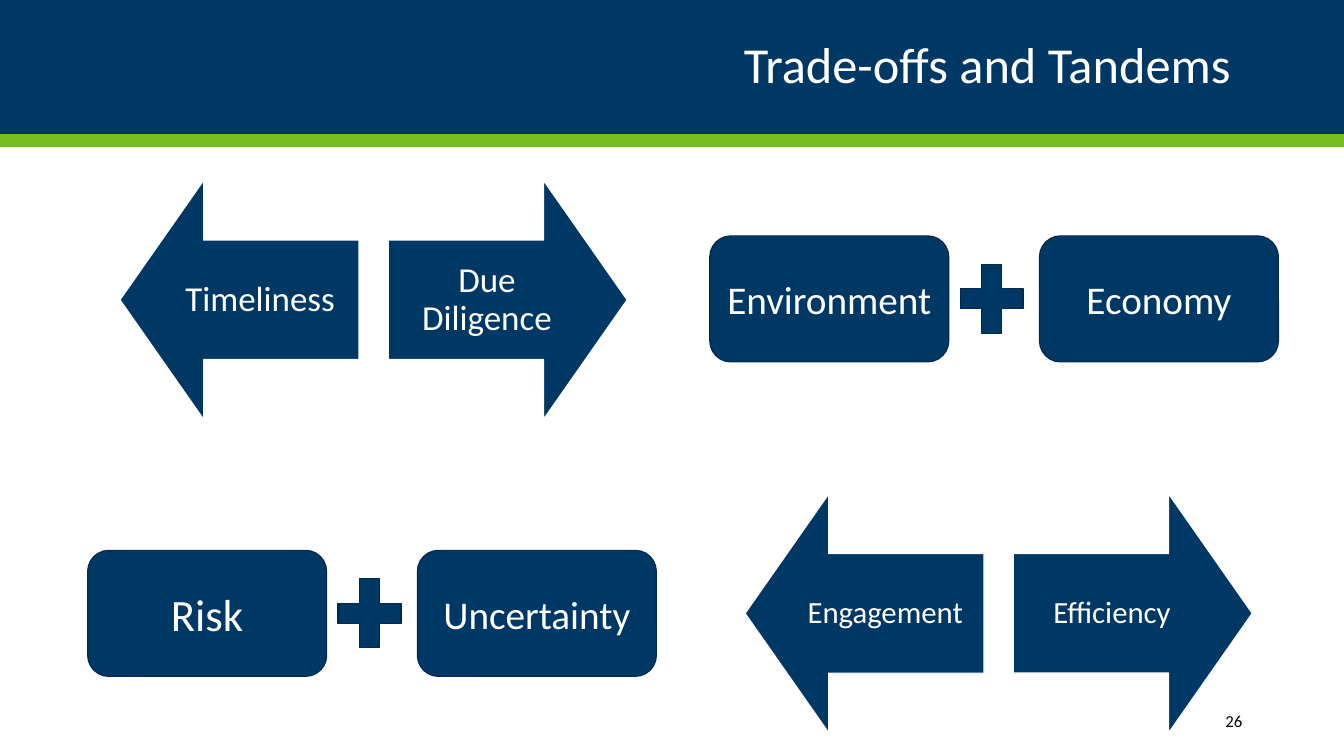
from pptx import Presentation
from pptx.dml.color import RGBColor
from pptx.enum.shapes import MSO_SHAPE
from pptx.enum.text import MSO_ANCHOR, PP_ALIGN
from pptx.util import Inches, Pt

NAVY = RGBColor(0x00, 0x38, 0x65)
DARK_NAVY = RGBColor(0x00, 0x29, 0x4B)
GREEN = RGBColor(0x78, 0xBE, 0x21)
WHITE = RGBColor(0xFF, 0xFF, 0xFF)
BLACK = RGBColor(0x00, 0x00, 0x00)
FONT = "Calibri"

TITLE = "Trade-offs and Tandems "
PAGE_NUMBER = "26"
BANDS = [(0, 1.33, NAVY), (1.33, 0.13, GREEN)]  # top, height, colour
# left, top, text size, text inset, words on the left and right arrow
TRADE_OFFS = [
    (1.19, 1.79, 25, 0.19, ("Timeliness", "Due Diligence")),
    (7.39, 4.9, 22, 0.17, ("Engagement", "Efficiency")),
]
# left, top, (word, text size) of each box
TANDEMS = [
    (0.87, 5.46, (("Risk", 32), ("Uncertainty", 28))),
    (7.04, 2.34, (("Environment", 28), ("Economy", 28))),
]

SLIDE_W, SLIDE_H = 13.33, 7.5
ARROW, ARROW_STEP = 2.37, 2.66
LABEL_W, LABEL_H = 1.96, 1.18
BOX_W, BOX_H, BOX_STEP = 2.37, 1.25, 3.27
PLUS_W, PLUS_H = 0.85, 0.93


def add_filled(kind, left, top, width, height, fill, line=None):
    shape = s.shapes.add_shape(
        kind, Inches(left), Inches(top), Inches(width), Inches(height))
    shape.shadow.inherit = False
    shape.fill.solid()
    shape.fill.fore_color.rgb = fill
    if line is None:
        shape.line.fill.background()
    else:
        shape.line.color.rgb = line
        shape.line.width = Pt(0.85)
    return shape


def write(shape, text, size, color=WHITE, align=PP_ALIGN.CENTER, spacing=1.0, inset=None):
    tf = shape.text_frame
    tf.word_wrap = True
    tf.vertical_anchor = MSO_ANCHOR.MIDDLE
    if inset is not None:
        for side in ("left", "top", "right", "bottom"):
            setattr(tf, f"margin_{side}", Inches(inset))
    p = tf.paragraphs[0]
    p.alignment = align
    p.line_spacing = spacing
    r = p.add_run()
    r.text = text
    for name, value in {"name": FONT, "size": Pt(size)}.items():
        setattr(r.font, name, value)
    r.font.color.rgb = color


def add_text_box(left, top, width, height):
    return s.shapes.add_textbox(
        Inches(left), Inches(top), Inches(width), Inches(height))


def add_trade_off(left, top, size, inset, words):
    for i, word in enumerate(words):
        x = left + i * ARROW_STEP
        arrow = add_filled(MSO_SHAPE.UP_ARROW, x, top, ARROW, ARROW, NAVY, WHITE)
        arrow.rotation = (270, 90)[i]
        arrow.adjustments[0], arrow.adjustments[1] = 0.5, 0.35
        label_left = x + (ARROW - LABEL_W if i == 0 else 0)
        label = add_text_box(label_left, top + (ARROW - LABEL_H) / 2, LABEL_W, LABEL_H)
        write(label, word, size, spacing=0.9, inset=inset)


def add_tandem(left, top, words):
    for i, (word, size) in enumerate(words):
        box = add_filled(MSO_SHAPE.ROUNDED_RECTANGLE, left + i * BOX_STEP, top,
                         BOX_W, BOX_H, NAVY, DARK_NAVY)
        write(box, word, size)
    add_filled(MSO_SHAPE.MATH_PLUS, left + BOX_W, top + (BOX_H - PLUS_H) / 2,
               PLUS_W, PLUS_H, NAVY, DARK_NAVY)


prs = Presentation()
prs.slide_width, prs.slide_height = Inches(SLIDE_W), Inches(SLIDE_H)
s = prs.slides.add_slide(prs.slide_layouts[5])

for top, height, color in BANDS:
    add_filled(MSO_SHAPE.RECTANGLE, 0, top, SLIDE_W, height, color)

title = s.shapes.title
title.left, title.top = Inches(0.92), Inches(0.17)
title.width, title.height = Inches(11.5), Inches(1)
write(title, TITLE, 36, align=PP_ALIGN.RIGHT, spacing=0.9)
s.shapes.element.append(title.element)  # in front of the bands

write(add_text_box(10.82, 6.95, 1.6, 0.4), PAGE_NUMBER, 12, BLACK, PP_ALIGN.RIGHT)

for trade_off in TRADE_OFFS:
    add_trade_off(*trade_off)
for tandem in TANDEMS:
    add_tandem(*tandem)

prs.save("out.pptx")
